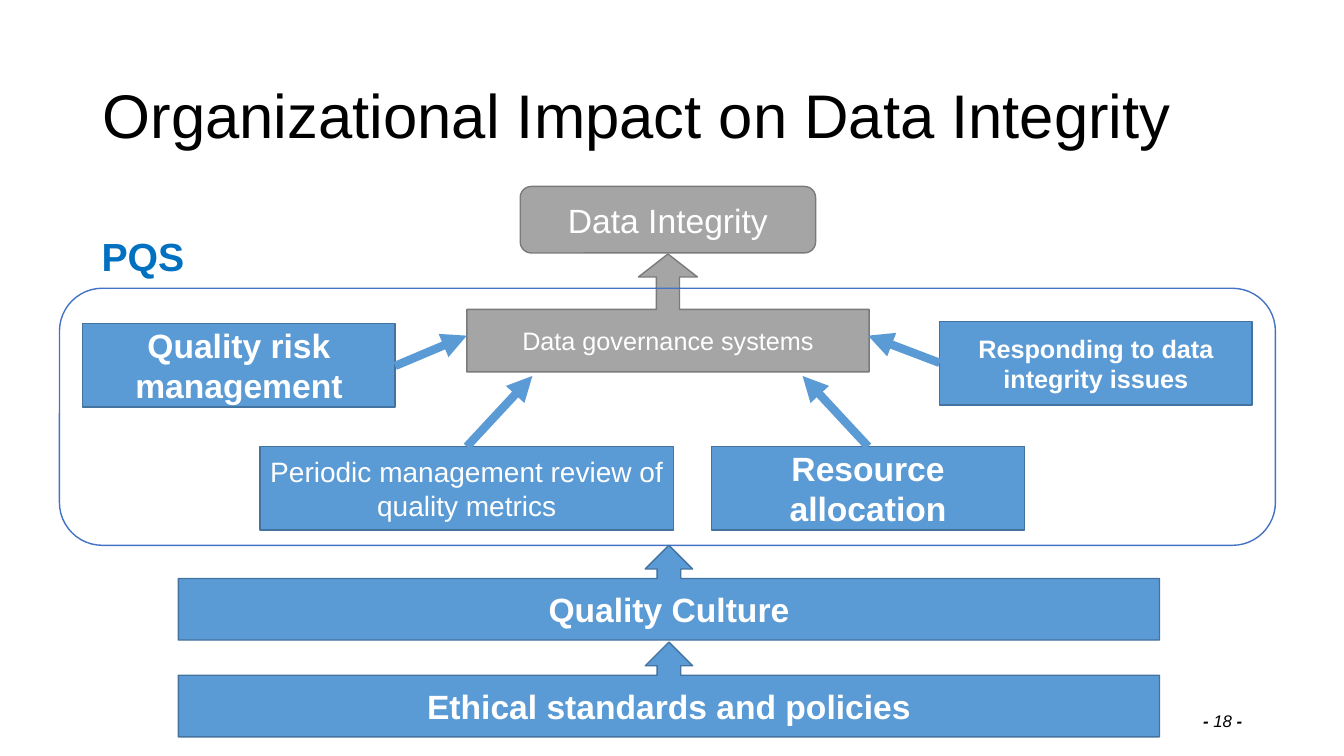
from lxml.etree import SubElement
from pptx import Presentation
from pptx.dml.color import RGBColor
from pptx.enum.shapes import MSO_CONNECTOR as Connector, MSO_SHAPE as Shape
from pptx.enum.text import MSO_ANCHOR as Anchor, MSO_AUTO_SIZE as AutoSize, PP_ALIGN as Align
from pptx.oxml.ns import qn
from pptx.util import Inches, Pt

BLUE, BLUE_EDGE = "5B9BD5", "43739E"
GRAY, GRAY_EDGE = "A5A5A5", "7A7A7A"


def color(value):
    return RGBColor.from_string(value)


def write(frame, lines, size=24, ink="FFFFFF", bold=False, align=Align.CENTER, anchor=Anchor.MIDDLE):
    frame.word_wrap = True
    frame.vertical_anchor = anchor
    for index, line in enumerate(lines):
        paragraph = frame.add_paragraph() if index else frame.paragraphs[0]
        paragraph.alignment = align
        add_run(paragraph, line, size, ink, bold)


def add_run(paragraph, text, size, ink, bold, italic=False):
    run = paragraph.add_run()
    run.text = text
    font = run.font
    font.name, font.size, font.bold, font.italic = "Arial", Pt(size), bold, italic
    font.color.rgb = color(ink)


class Diagram:
    def __init__(self, slide):
        self.slide = slide

    def title(self, text, *box):
        title = self.slide.shapes.title
        title.left, title.top, title.width, title.height = map(Inches, box)
        write(title.text_frame, [text], size=44, ink="000000", align=Align.LEFT)
        title.text_frame.auto_size = AutoSize.NONE

    def block(self, kind, box, lines=(), fill=BLUE, edge=BLUE_EDGE, adjust=(), **style):
        shape = self.slide.shapes.add_shape(kind, *map(Inches, box))
        shape.shadow.inherit = False
        if fill:
            shape.fill.solid()
            shape.fill.fore_color.rgb = color(fill)
        else:
            shape.fill.background()
        shape.line.color.rgb = color(edge)
        shape.line.width = Pt(1)
        for index, value in enumerate(adjust):
            shape.adjustments[index] = value
        write(shape.text_frame, lines, **style)

    def label(self, box, lines, **style):
        frame = self.slide.shapes.add_textbox(*map(Inches, box)).text_frame
        write(frame, lines, **style)
        return frame

    def arrow(self, *points):
        connector = self.slide.shapes.add_connector(Connector.STRAIGHT, *map(Inches, points))
        connector.line.color.rgb = color(BLUE)
        connector.line.width = Pt(6)
        SubElement(connector.line._get_or_add_ln(), qn("a:tailEnd"), type="triangle")
        SubElement(connector._element.spPr, qn("a:effectLst"))

    def page_number(self, box, number):
        paragraph = self.label(box, []).paragraphs[0]
        paragraph.alignment = Align.RIGHT
        for text, bold in (("- ", True), (number, False), (" -", True)):
            add_run(paragraph, text, 12, "000000", bold, italic=True)


def main():
    presentation = Presentation()
    presentation.slide_width, presentation.slide_height = Inches(13.33), Inches(7.5)
    diagram = Diagram(presentation.slides.add_slide(presentation.slide_layouts[5]))
    diagram.title("Organizational Impact on Data Integrity", 0.92, 0.4, 11.5, 1.45)

    diagram.block(Shape.ROUNDED_RECTANGLE, (5.16, 1.85, 2.93, 0.66), ["Data Integrity"],
                  fill=GRAY, edge=GRAY_EDGE)
    diagram.block(Shape.UP_ARROW_CALLOUT, (4.63, 2.52, 3.99, 1.17), ["Data governance systems"],
                  fill=GRAY, edge=GRAY_EDGE, adjust=(0.195, 0.25, 0.195, 0.53), size=18)
    diagram.block(Shape.ROUNDED_RECTANGLE, (0.59, 2.86, 12.06, 2.55), fill=None, edge="4472C4")

    elements = [
        (2.58, 4.43, 4.1, ["Periodic management review of quality metrics"], 20, False),
        (7.06, 4.43, 3.1, ["Resource allocation"], 24, True),
        (9.32, 3.19, 3.1, ["Responding to data integrity issues"], 18, True),
        (0.82, 3.21, 3.1, ["Quality risk", "management"], 24, True),
    ]
    for left, top, width, lines, size, bold in elements:
        diagram.block(Shape.RECTANGLE, (left, top, width, 0.83), lines, size=size, bold=bold)

    for points in ((3.92, 3.63, 4.63, 3.33), (9.32, 3.6, 8.61, 3.33),
                   (4.63, 4.43, 5.28, 3.73), (8.61, 4.43, 7.96, 3.73)):
        diagram.arrow(*points)

    diagram.label((0.91, 2.26, 1.45, 0.57), ["PQS"], size=28, ink="0070C0", bold=True,
                  align=Align.LEFT, anchor=Anchor.TOP)
    for top, text in ((6.37, "Ethical standards and policies"), (5.41, "Quality Culture")):
        diagram.block(Shape.UP_ARROW_CALLOUT, (1.77, top, 9.73, 0.94), [text], bold=True)
    diagram.page_number((9.42, 6.95, 3, 0.4), "18")
    presentation.save("out.pptx")


if __name__ == "__main__":
    main()
